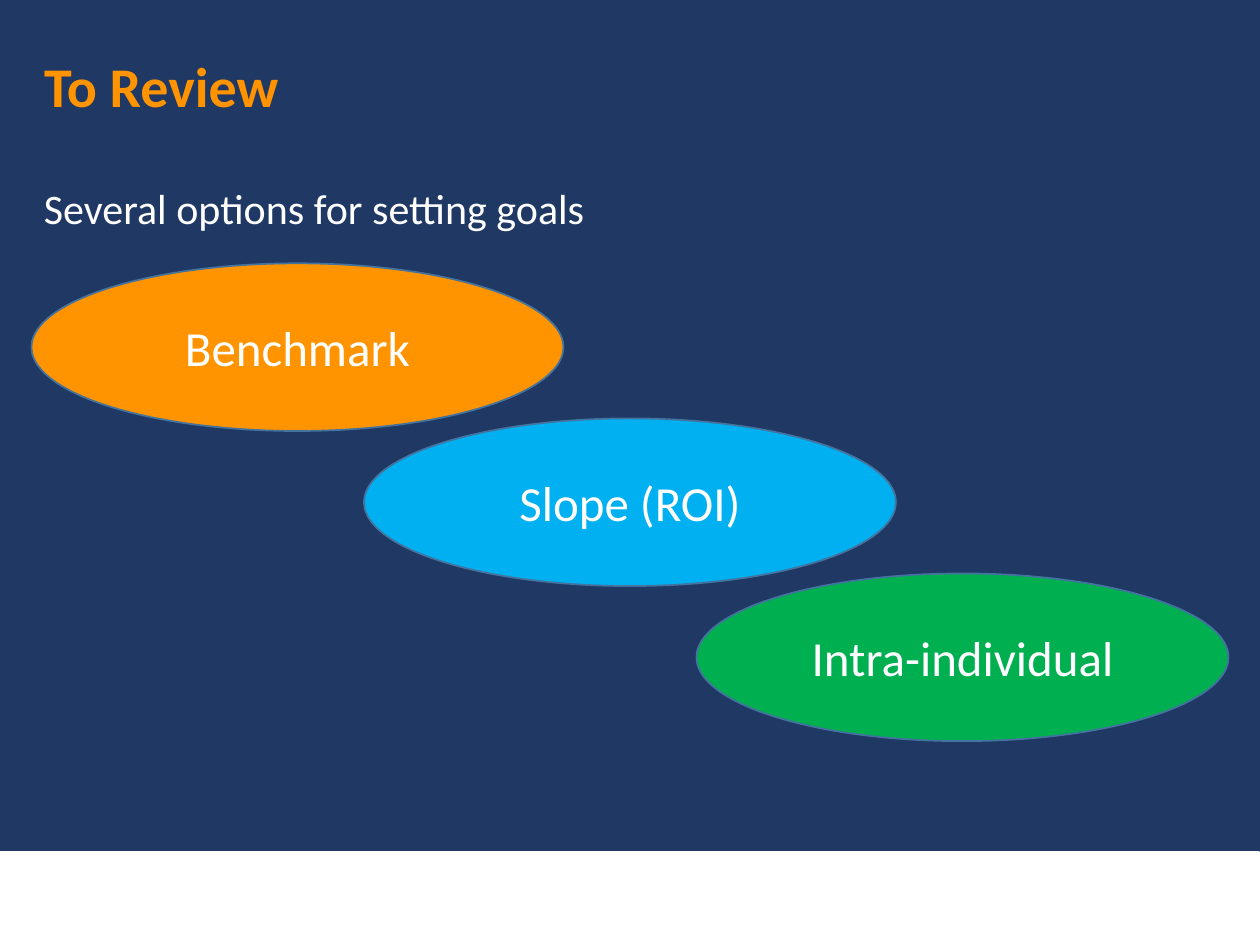
from pptx import Presentation
from pptx.dml.color import RGBColor
from pptx.enum.shapes import MSO_SHAPE
from pptx.enum.text import MSO_ANCHOR, PP_ALIGN
from pptx.util import Pt

TITLE = "To Review"
LEAD = "Several options for setting goals"
GOALS = [("Benchmark", "orange"), ("Slope (ROI)", "blue"), ("Intra-individual", "green")]

THEME = {
    "font": "Calibri",
    "colors": {
        "navy": "203864", "white": "FFFFFF", "orange": "FF9300",
        "blue": "00B0F0", "green": "00B050", "outline": "43739E",
    },
    "sizes": {"title": 32, "lead": 24, "goal": 28},
}

SLIDE_W, SLIDE_H = 720, 540
MARGIN = 18
CONTENT_W = SLIDE_W - 2 * MARGIN
FOOTER = (0, 486.7, 719.3, 53.3)
OVAL_W, OVAL_H = 304, 95.8
OVAL_TOP, OVAL_STEP_Y = 150.5, 88.6
OVAL_STEP_X = (CONTENT_W - OVAL_W) / (len(GOALS) - 1)


def color(name):
    return RGBColor.from_string(THEME["colors"][name])


def paint(sp, fill, line):
    sp.shadow.inherit = False
    sp.fill.solid()
    sp.fill.fore_color.rgb = color(fill)
    sp.line.color.rgb = color(line)
    sp.line.width = Pt(1)


def write(sp, text, role, ink, anchor, bold=False, **paragraph_format):
    tf = sp.text_frame
    frame_format = {
        "word_wrap": True, "vertical_anchor": anchor,
        "margin_left": Pt(7.2), "margin_right": Pt(7.2),
        "margin_top": Pt(3.6), "margin_bottom": Pt(3.6),
    }
    for key, value in frame_format.items():
        setattr(tf, key, value)
    p = tf.paragraphs[0]
    for key, value in paragraph_format.items():
        setattr(p, key, value)
    r = p.add_run()
    r.text = text
    font_format = {"name": THEME["font"], "size": Pt(THEME["sizes"][role]), "bold": bold}
    for key, value in font_format.items():
        setattr(r.font, key, value)
    r.font.color.rgb = color(ink)


prs = Presentation()
prs.slide_width, prs.slide_height = Pt(SLIDE_W), Pt(SLIDE_H)
s = prs.slides.add_slide(prs.slide_layouts[5])
s.background.fill.solid()
s.background.fill.fore_color.rgb = color("navy")

footer = s.shapes.add_shape(MSO_SHAPE.RECTANGLE, *map(Pt, FOOTER))
paint(footer, "white", "white")

title = s.shapes.title
title_box = {"left": MARGIN, "top": 18, "width": CONTENT_W, "height": 57.6}
for key, value in title_box.items():
    setattr(title, key, Pt(value))
title.fill.solid()
title.fill.fore_color.rgb = color("navy")
write(title, TITLE, "title", "orange", MSO_ANCHOR.MIDDLE, bold=True,
      alignment=PP_ALIGN.LEFT, line_spacing=1.1)

lead = s.shapes.add_textbox(Pt(MARGIN), Pt(97.9), Pt(CONTENT_W), Pt(380.9))
write(lead, LEAD, "lead", "white", MSO_ANCHOR.TOP,
      alignment=PP_ALIGN.LEFT, line_spacing=1.1)

for i, (goal, fill) in enumerate(GOALS):
    oval = s.shapes.add_shape(
        MSO_SHAPE.OVAL, Pt(MARGIN + i * OVAL_STEP_X), Pt(OVAL_TOP + i * OVAL_STEP_Y),
        Pt(OVAL_W), Pt(OVAL_H))
    paint(oval, fill, "outline")
    write(oval, goal, "goal", "white", MSO_ANCHOR.MIDDLE, alignment=PP_ALIGN.CENTER)

prs.save("out.pptx")
